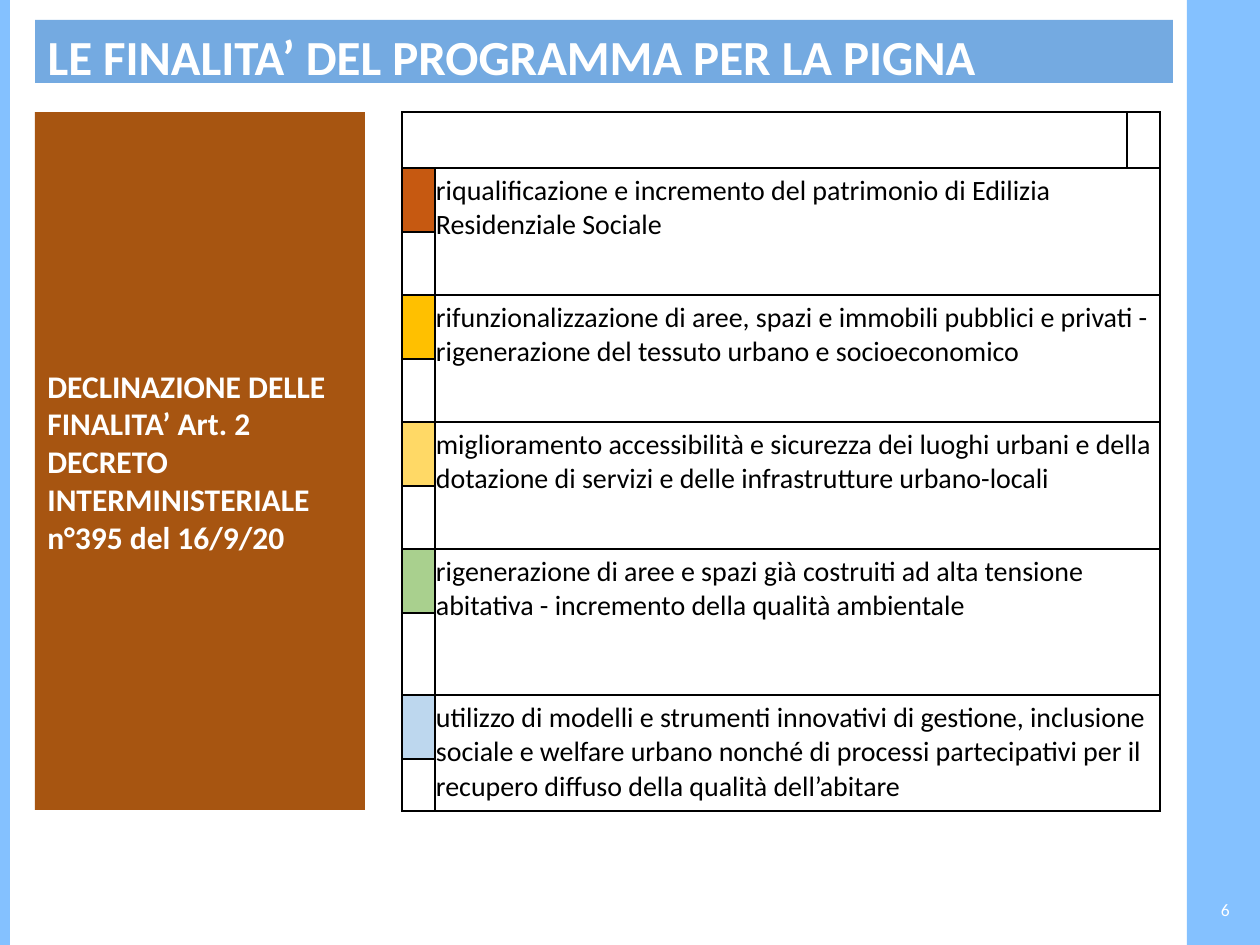
from pptx import Presentation
from pptx.dml.color import RGBColor
from pptx.enum.shapes import MSO_SHAPE as SHAPE
from pptx.enum.text import MSO_ANCHOR as ANCHOR, MSO_AUTO_SIZE as AUTO, PP_ALIGN as ALIGN
from pptx.oxml import parse_xml
from pptx.oxml.ns import nsdecls
from pptx.util import Emu, Pt

FONT = "Calibri"
WHITE = RGBColor(0xFF, 0xFF, 0xFF)
BLACK = RGBColor(0, 0, 0)
SKY = RGBColor(0x84, 0xC1, 0xFF)
BLUE = RGBColor(0x74, 0xAA, 0xE1)
BROWN = RGBColor(0xA7, 0x55, 0x11)

GOALS = [
    (RGBColor(0xC6, 0x59, 0x11),
     "riqualificazione e incremento del patrimonio di Edilizia Residenziale Sociale"),
    (RGBColor(0xFF, 0xC0, 0x00),
     "rifunzionalizzazione di aree, spazi e immobili pubblici e privati - "
     "rigenerazione del tessuto urbano e socioeconomico"),
    (RGBColor(0xFF, 0xD9, 0x66),
     "miglioramento accessibilità e sicurezza dei luoghi urbani e della "
     "dotazione di servizi e delle infrastrutture urbano-locali"),
    (RGBColor(0xA9, 0xD0, 0x8E),
     "rigenerazione di aree e spazi già costruiti ad alta tensione abitativa - "
     "incremento della qualità ambientale"),
    (RGBColor(0xBD, 0xD7, 0xEE),
     "utilizzo di modelli e strumenti innovativi di gestione, inclusione sociale e "
     "welfare urbano nonché di processi partecipativi per il recupero diffuso della "
     "qualità dell’abitare"),
]
COLUMNS = [33, 692, 33]
ROWS = [56, 64, 63, 64, 63, 64, 63, 64, 82, 64, 52]


def px(n):
    return Emu(round(n * 914400 / 126))


def write(tf, text, size, color=WHITE, bold=False, align=ALIGN.LEFT, anchor=ANCHOR.MIDDLE):
    tf.word_wrap = True
    tf.auto_size = AUTO.NONE
    tf.vertical_anchor = anchor
    add_run(tf.paragraphs[0], text, size, color, bold, align)


def add_run(p, text, size, color, bold=False, align=ALIGN.LEFT):
    p.alignment = align
    r = p.add_run()
    r.text = text
    r.font.name = FONT
    r.font.size = Pt(size)
    r.font.bold = bold
    r.font.color.rgb = color


def add_box(slide, x, y, w, h, color):
    sp = slide.shapes.add_shape(SHAPE.RECTANGLE, px(x), px(y), px(w), px(h))
    sp.shadow.inherit = False
    sp.fill.solid()
    sp.fill.fore_color.rgb = color
    sp.line.fill.background()
    return sp


def set_title(slide, x, y, w, h, text):
    sp = slide.shapes.title
    sp.left, sp.top, sp.width, sp.height = px(x), px(y), px(w), px(h)
    sp.fill.solid()
    sp.fill.fore_color.rgb = BLUE
    write(sp.text_frame, text, 28, bold=True, anchor=ANCHOR.TOP)


def format_cell(cell, color=WHITE):
    cell.margin_left = cell.margin_right = px(1)
    cell.margin_top = cell.margin_bottom = px(6)
    tc_pr = cell._tc.get_or_add_tcPr()
    for side in "LRTB":
        tc_pr.append(parse_xml(
            f'<a:ln{side} {nsdecls("a")} w="12192"><a:solidFill>'
            f'<a:srgbClr val="{BLACK}"/></a:solidFill></a:ln{side}>'))
    cell.fill.solid()
    cell.fill.fore_color.rgb = color


def add_goals_table(slide, x, y):
    frame = slide.shapes.add_table(len(ROWS), len(COLUMNS), px(x), px(y),
                                   px(sum(COLUMNS)), px(sum(ROWS)))
    table = frame.table
    table.first_row = table.horz_banding = False
    for column, width in zip(table.columns, COLUMNS):
        column.width = px(width)
    for row, height in zip(table.rows, ROWS):
        row.height = px(height)

    swatches = {1 + 2 * i: color for i, (color, _) in enumerate(GOALS)}
    for r in range(len(ROWS)):
        for c in range(len(COLUMNS)):
            format_cell(table.cell(r, c), swatches.get(r, WHITE) if c == 0 else WHITE)

    table.cell(0, 0).merge(table.cell(0, 1))
    for r, (_, text) in zip(swatches, GOALS):
        cell = table.cell(r, 1)
        cell.merge(table.cell(r + 1, 2))
        add_run(cell.text_frame.paragraphs[0], text, 16, BLACK)


def add_page_number(slide, x, y, w, h, text):
    sp = slide.shapes.add_textbox(px(x), px(y), px(w), px(h))
    write(sp.text_frame, text, 10, align=ALIGN.RIGHT)


def main():
    prs = Presentation()
    prs.slide_width, prs.slide_height = px(1260), px(945)
    slide = prs.slides.add_slide(prs.slide_layouts[5])
    add_box(slide, 1187, 0, 73, 945, SKY)
    add_box(slide, 0, 0, 10, 945, SKY)
    panel = add_box(slide, 35, 112, 330, 698, BROWN)
    write(panel.text_frame,
          "DECLINAZIONE DELLE FINALITA’ Art. 2 DECRETO INTERMINISTERIALE n°395 del 16/9/20",
          18, bold=True)
    set_title(slide, 35, 20, 1138, 63, "LE FINALITA’ DEL PROGRAMMA PER LA PIGNA")
    add_page_number(slide, 1106, 888, 136, 42, "6")
    add_goals_table(slide, 402, 112)
    prs.save("out.pptx")


if __name__ == "__main__":
    main()
